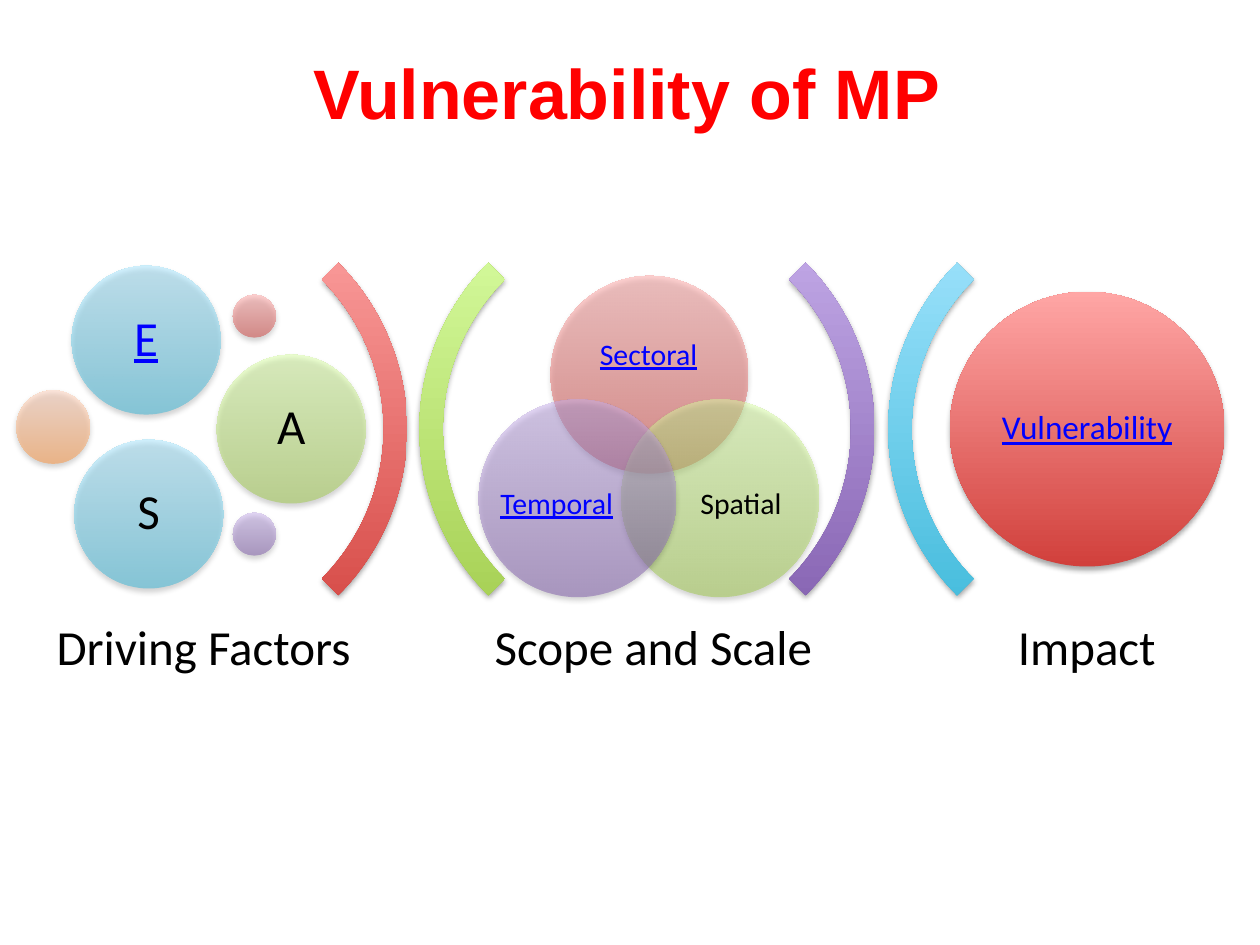
from lxml import etree
from pptx import Presentation
from pptx.dml.color import RGBColor
from pptx.enum import shapes, text
from pptx.oxml import ns, parse_xml
from pptx.util import Pt

# Each gradient runs from dark at the bottom to light at the top
RED = ("D1403C", "FFA6A5")
GREEN = ("A0CA4A", "DAFFA5")
PURPLE = ("7F5BAB", "C8B0ED")
BLUE = ("39B7D8", "A7E6FF")
ORANGE = ("FF953E", "FFD2BD")
BLACK, LINK_BLUE, TITLE_RED = "000000", "0000FF", "FF0000"

MIDDLE = 245.2       # height of the row's axis
ARC_SIZE = 268.6
LABEL_Y = 371.2
SHADOW = (
    f'<a:effectLst {ns.nsdecls("a")}>'
    '<a:outerShdw blurRad="40000" dist="23000" dir="5400000" rotWithShape="0">'
    '<a:srgbClr val="000000"><a:alpha val="35000"/></a:srgbClr>'
    '</a:outerShdw></a:effectLst>'
)


def add_gradient_shape(kind, x, y, size, colors, opacity=100):
    """Add a square-framed shape centred on x, y."""
    shape = page.shapes.add_shape(
        kind, Pt(x - size / 2), Pt(y - size / 2), Pt(size), Pt(size))
    shape.line.fill.background()
    shape.fill.gradient()
    shape.fill.gradient_angle = 90
    for stop, color in zip(shape.fill.gradient_stops, colors):
        stop.color.rgb = RGBColor.from_string(color)
    properties = shape._element.spPr
    gradient = properties.find(ns.qn("a:gradFill"))
    gradient.set("rotWithShape", "0")
    if opacity < 100:
        for color in gradient.iter(ns.qn("a:srgbClr")):
            etree.SubElement(color, ns.qn("a:alpha"), val=str(opacity * 1000))
    properties.append(parse_xml(SHADOW))
    return shape


def write(frame, words, size, color, font="Calibri", spacing=0.9):
    """Put one centred line of text in a frame and return its run."""
    frame.word_wrap = True
    frame.vertical_anchor = text.MSO_ANCHOR.MIDDLE
    para = frame.paragraphs[0]
    para.alignment = text.PP_ALIGN.CENTER
    para.line_spacing = spacing
    span = para.add_run()
    span.text = words
    span.font.name = font
    span.font.size = Pt(size)
    span.font.color.rgb = RGBColor.from_string(color)
    return span


deck = Presentation()
deck.slide_width, deck.slide_height = Pt(720), Pt(540)
page = deck.slides.add_slide(deck.slide_layouts[5])

title = page.shapes.title
title.left, title.top, title.width, title.height = Pt(66.2), Pt(5.8), Pt(594), Pt(92.9)
write(title.text_frame, "Vulnerability of MP ", 40, TITLE_RED, "Arial", 1).font.bold = True

# Brackets between the three stages: centre x, rotation, colours
for x, rotation, colors in [
    (98.3, 90, RED), (374, 270, GREEN), (365.4, 90, PURPLE), (641.9, 270, BLUE),
]:
    arc = add_gradient_shape(shapes.MSO_SHAPE.BLOCK_ARC, x, MIDDLE, ARC_SIZE, colors)
    arc.rotation = rotation
    for index, value in enumerate((135, 189, 0.05)):
        arc.adjustments[index] = value

# Circles: centre x, centre y, diameter, colours, opacity
for x, y, diameter, colors, opacity in [
    (371.2, 214.2, 113, RED, 50),
    (411.5, 284.8, 113, GREEN, 50),
    (330.1, 284.8, 113, PURPLE, 50),
    (83.5, 194.4, 85, BLUE, 50),
    (30.4, 244.1, 42, ORANGE, 50),
    (145.4, 180.7, 24.5, RED, 50),
    (166.4, 245.2, 85, GREEN, 50),
    (145.4, 305.3, 24.5, PURPLE, 50),
    (85, 293.8, 85, BLUE, 50),
    (621.2, MIDDLE, 157, RED, 100),
]:
    add_gradient_shape(shapes.MSO_SHAPE.OVAL, x, y, diameter, colors, opacity)

# Texts: words, centre x, centre y, width, height, inset, size, colour
for words, x, y, width, height, inset, size, color in [
    ("Driving Factors", 116.3, LABEL_Y, 203.8, 54, 8.6, 28, BLACK),
    ("Scope and Scale ", 373.3, LABEL_Y, 203.8, 54, 8.6, 28, BLACK),
    ("Impact", 621, LABEL_Y, 203.8, 54, 8.6, 28, BLACK),
    ("Sectoral", 370.6, 203.4, 82.8, 51, 0, 17, LINK_BLUE),
    ("Spatial", 423.4, 288.7, 67.7, 62, 0, 17, BLACK),
    ("Temporal ", 318.2, 288.7, 67.7, 62, 0, 17, LINK_BLUE),
    ("E", 83.5, 194.4, 60.5, 60.5, 8.6, 28, LINK_BLUE),
    ("A", 166.4, 245.2, 60.5, 60.5, 8.6, 28, BLACK),
    ("S", 85, 293.8, 60.5, 60.5, 8.6, 28, BLACK),
    ("Vulnerability ", 621.2, MIDDLE, 111, 111, 5.8, 19, LINK_BLUE),
]:
    box = page.shapes.add_textbox(
        Pt(x - width / 2), Pt(y - height / 2), Pt(width), Pt(height))
    frame = box.text_frame
    frame.margin_left = frame.margin_right = Pt(inset)
    frame.margin_top = frame.margin_bottom = Pt(inset)
    span = write(frame, words, size, color)
    if color == LINK_BLUE:
        span.font.underline = True

deck.save("out.pptx")
